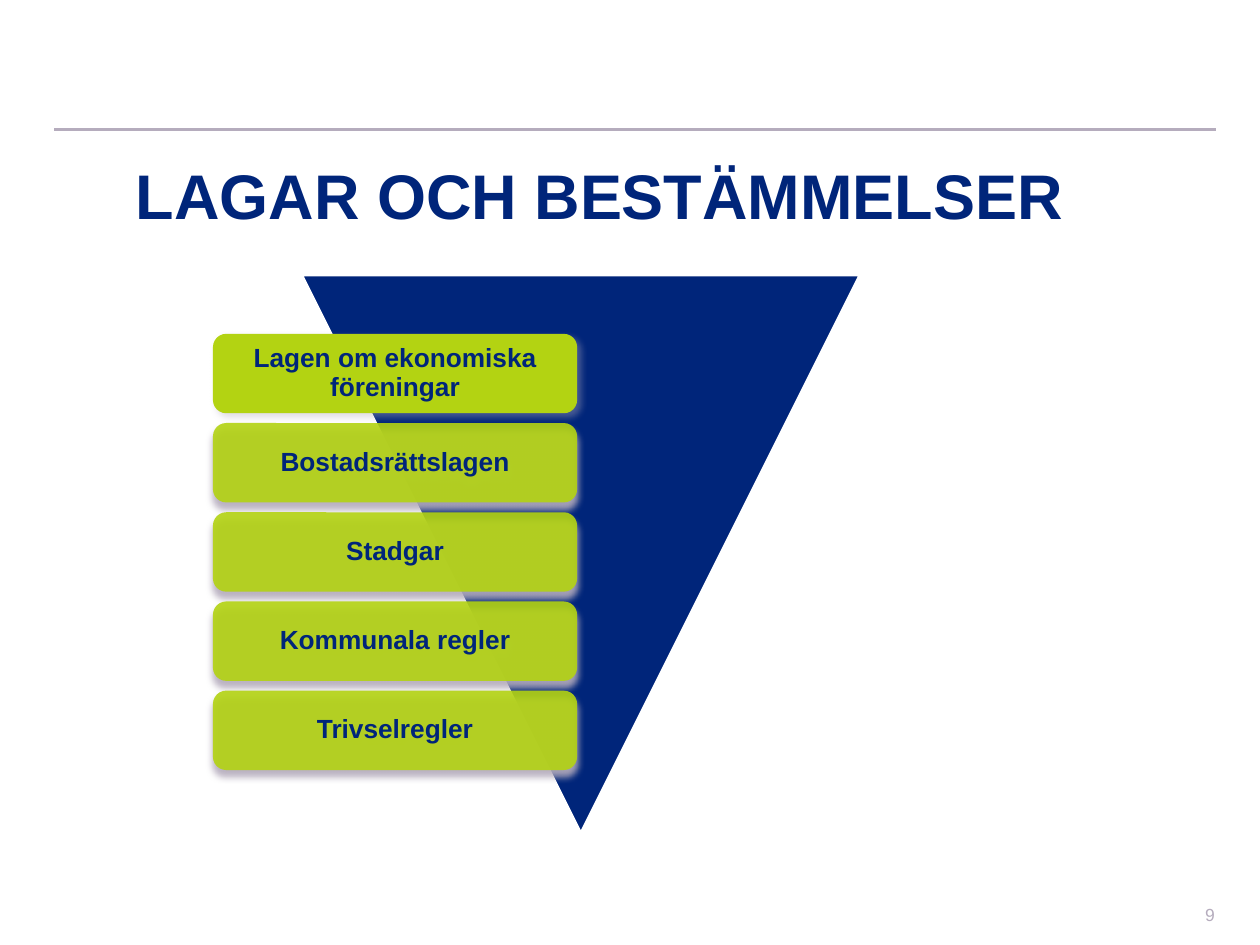
"""Build a slide showing the order of laws and rules on an inverted triangle."""
from lxml.etree import SubElement
from pptx import Presentation
from pptx.dml.color import RGBColor
from pptx.enum.shapes import MSO_CONNECTOR as Connector, MSO_SHAPE as Shape
from pptx.enum.text import MSO_ANCHOR as Anchor, PP_ALIGN as Align
from pptx.oxml.ns import qn
from pptx.util import Inches, Pt

NAVY, LIME, GREY, WHITE = "00257A", "B3D312", "B5ACBD", "FFFFFF"


def color(value):
    return RGBColor.from_string(value)


def write(shape, text, align, anchor, inset, spacing, font):
    frame = shape.text_frame
    margins = {f"margin_{side}": Inches(inset[side in ("top", "bottom")])
               for side in ("left", "right", "top", "bottom")}
    for name, value in {"word_wrap": True, "vertical_anchor": anchor, **margins}.items():
        setattr(frame, name, value)
    para = frame.paragraphs[0]
    para.alignment, para.line_spacing = align, spacing
    span = para.add_run()
    span.text = text
    for name, value in {"name": "Arial", **font}.items():
        if name == "color":
            span.font.color.rgb = color(value)
        else:
            setattr(span.font, name, value)


deck = Presentation()
deck.slide_width, deck.slide_height = Inches(10), Inches(7.5)
page = deck.slides.add_slide(deck.slide_layouts[6])

rule = page.shapes.add_connector(
    Connector.STRAIGHT, Inches(0.43), Inches(1.03), Inches(9.65), Inches(1.03))
rule.line.color.rgb, rule.line.width = color(GREY), Pt(1.5)
SubElement(rule._element.spPr, qn("a:effectLst"))

number = page.shapes.add_textbox(Inches(8.17), Inches(7.16), Inches(1.57), Inches(0.2))
write(number, "9", Align.RIGHT, Anchor.MIDDLE, (0.1, 0.05), 1.0,
      {"size": Pt(10), "color": GREY})

triangle = page.shapes.add_shape(
    Shape.ISOSCELES_TRIANGLE, Inches(2.39), Inches(2.18), Inches(4.44), Inches(4.44))
triangle.rotation = 180
triangle.shadow.inherit = False
triangle.fill.solid()
triangle.fill.fore_color.rgb = color(NAVY)
triangle.line.color.rgb, triangle.line.width = color(WHITE), Pt(2)

rules = ["Lagen om ekonomiska föreningar", "Bostadsrättslagen", "Stadgar",
         "Kommunala regler", "Trivselregler"]
for index, label in enumerate(rules):
    box = page.shapes.add_shape(
        Shape.ROUNDED_RECTANGLE, Inches(1.69), Inches(2.65 + index * 0.708),
        Inches(2.89), Inches(0.63))
    box.shadow.inherit = False
    box.fill.solid()
    box.fill.fore_color.rgb = color(LIME)
    box.line.fill.background()
    opacity, distance, angle = (40, 3, 45) if index == 0 else (100, 4, 90)
    properties = box._element.spPr
    if index:
        fill = properties.find(qn("a:solidFill"))
        SubElement(fill[0], qn("a:alpha"), val="90000")
    shadow = SubElement(
        properties.find(qn("a:effectLst")), qn("a:outerShdw"), blurRad=str(Pt(4)),
        dist=str(Pt(distance)), dir=str(angle * 60000), rotWithShape="0")
    tint = SubElement(shadow, qn("a:srgbClr"), val=GREY)
    SubElement(tint, qn("a:alpha"), val=str(opacity * 1000))
    write(box, label, Align.CENTER, Anchor.MIDDLE, (0.09, 0.09), 0.9,
          {"size": Pt(15), "bold": True, "color": NAVY})

title = page.shapes.add_textbox(Inches(0.98), Inches(1.26), Inches(9.41), Inches(1.57))
write(title, "LAGAR OCH BESTÄMMELSER", Align.LEFT, Anchor.TOP, (0.1, 0.05), 0.9,
      {"size": Pt(36), "bold": True, "color": NAVY})

deck.save("out.pptx")
